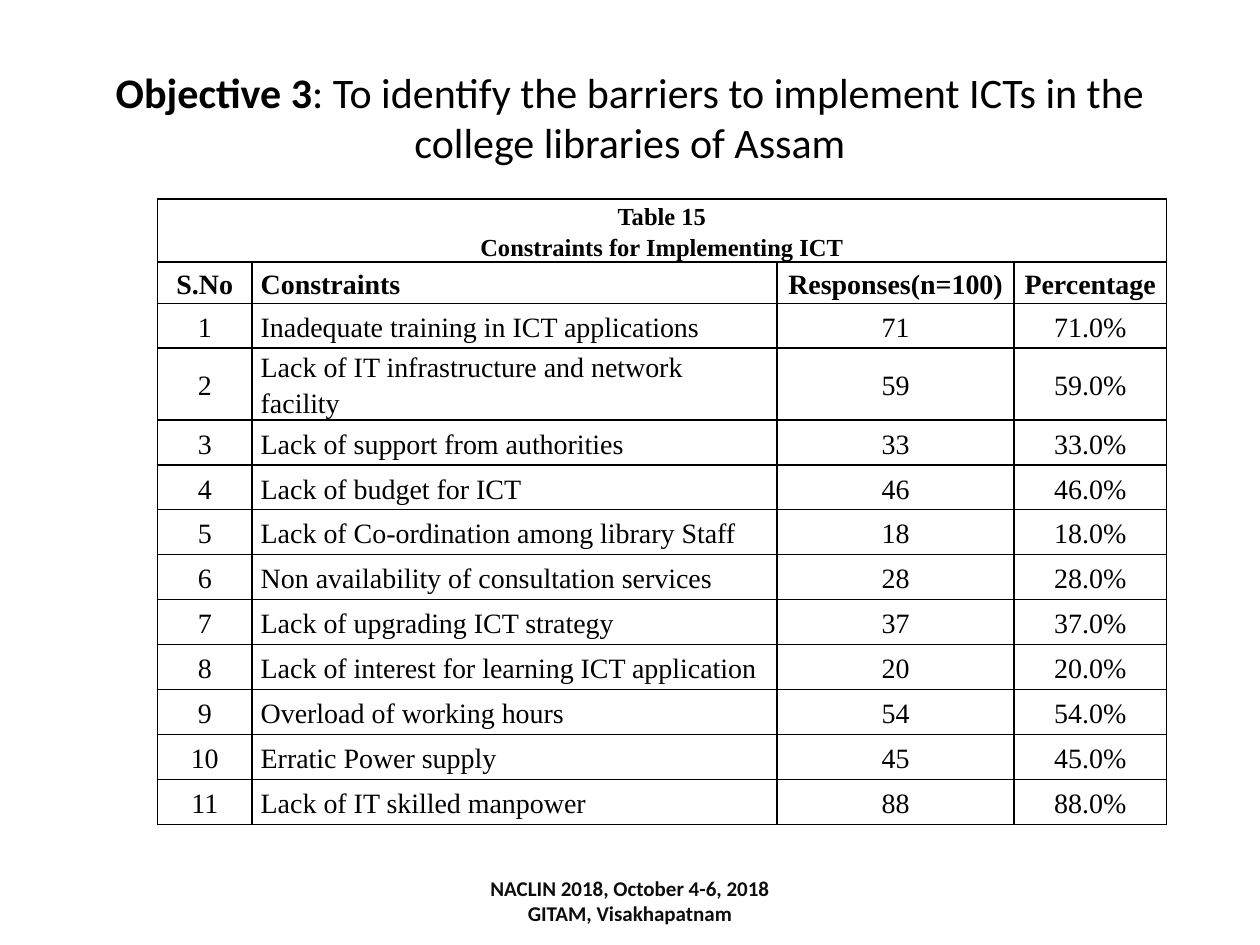
from dataclasses import dataclass

from lxml.etree import SubElement
from pptx import Presentation
from pptx.dml.color import RGBColor
from pptx.enum.text import MSO_ANCHOR, PP_ALIGN
from pptx.oxml.ns import qn
from pptx.util import Pt


@dataclass(frozen=True)
class Theme:
    ink: RGBColor = RGBColor(0, 0, 0)
    soft: RGBColor = RGBColor(0x0D, 0x0D, 0x0D)
    sans: str = "Calibri"
    serif: str = "Times New Roman"
    title: float = 24
    caption: float = 14
    body: float = 16
    foot: float = 12
    rule: float = 1
    inset: float = 5
    spacing: float = 1.15


@dataclass(frozen=True)
class Style:
    font: str
    size: float
    color: RGBColor
    bold: bool = False


@dataclass(frozen=True)
class Barrier:
    name: str
    count: int


LOOK = Theme()
PLAIN = Style(LOOK.serif, LOOK.body, LOOK.ink)
HEAD = Style(LOOK.serif, LOOK.body, LOOK.ink, True)
CAPTION = Style(LOOK.serif, LOOK.caption, LOOK.ink, True)
FOOT = Style(LOOK.sans, LOOK.foot, LOOK.soft, True)

WIDTHS = (54, 300, 135.5, 87)
CAPTION_H, HEAD_H, ROW_H = 36, 23.5, 25.7
HEADERS = ("S.No", "Constraints", "Responses(n=100)", "Percentage")
BARRIERS = (
    Barrier("Inadequate training in ICT applications", 71),
    Barrier("Lack of IT infrastructure and network facility", 59),
    Barrier("Lack of support from authorities", 33),
    Barrier("Lack of budget for ICT", 46),
    Barrier("Lack of Co-ordination among library Staff", 18),
    Barrier("Non availability of consultation services", 28),
    Barrier("Lack of upgrading ICT strategy", 37),
    Barrier("Lack of interest for learning ICT application", 20),
    Barrier("Overload of working hours", 54),
    Barrier("Erratic Power supply", 45),
    Barrier("Lack of IT skilled manpower", 88),
)


def add_run(para, text: str, style: Style) -> None:
    run = para.add_run()
    run.text = text
    font = run.font
    font.name, font.size, font.bold = style.font, Pt(style.size), style.bold
    font.color.rgb = style.color


def add_lines(frame, lines: tuple, style: Style, align=PP_ALIGN.CENTER,
              spacing: float = 1) -> None:
    for i, line in enumerate(lines):
        para = frame.add_paragraph() if i else frame.paragraphs[0]
        para.alignment, para.line_spacing = align, spacing
        add_run(para, line, style)


def place(shape, left: float, top: float, width: float, height: float) -> None:
    shape.left, shape.top = Pt(left), Pt(top)
    shape.width, shape.height = Pt(width), Pt(height)


def frame_cell(cell) -> None:
    """Rule all four sides, clear the fill and set the margins."""
    props = cell._tc.get_or_add_tcPr()
    for side in ("a:lnL", "a:lnR", "a:lnT", "a:lnB"):
        line = SubElement(props, qn(side), w=str(Pt(LOOK.rule)))
        fill = SubElement(line, qn("a:solidFill"))
        SubElement(fill, qn("a:srgbClr"), val=str(LOOK.ink))
    cell.fill.background()
    cell.margin_left = cell.margin_right = Pt(LOOK.inset)
    cell.margin_top = cell.margin_bottom = 0


def fill_row(table, row: int, texts: tuple, style: Style) -> None:
    for col, text in enumerate(texts):
        cell = table.cell(row, col)
        cell.vertical_anchor = MSO_ANCHOR.MIDDLE
        align = PP_ALIGN.LEFT if col == 1 else PP_ALIGN.CENTER
        add_lines(cell.text_frame, (text,), style, align, LOOK.spacing)


def add_title(slide) -> None:
    title = slide.shapes.title
    place(title, 36, 21.6, 648, 90)
    title.text_frame.vertical_anchor = MSO_ANCHOR.MIDDLE
    para = title.text_frame.paragraphs[0]
    para.alignment = PP_ALIGN.CENTER
    add_run(para, "Objective 3", Style(LOOK.sans, LOOK.title, LOOK.ink, True))
    add_run(para, ": To identify the barriers to implement ICTs in the "
            "college libraries of Assam", Style(LOOK.sans, LOOK.title, LOOK.ink))


def add_grid(slide) -> None:
    heights = (CAPTION_H, HEAD_H) + (ROW_H,) * len(BARRIERS)
    table = slide.shapes.add_table(
        len(heights), len(WIDTHS), Pt(90), Pt(113.8),
        Pt(sum(WIDTHS)), Pt(sum(heights))).table
    table.first_row = table.horz_banding = False
    for col, width in zip(table.columns, WIDTHS):
        col.width = Pt(width)
    for row, height in zip(table.rows, heights):
        row.height = Pt(height)
    for cell in table.iter_cells():
        frame_cell(cell)
    table.cell(0, 0).merge(table.cell(0, len(WIDTHS) - 1))
    add_lines(table.cell(0, 0).text_frame,
              ("Table 15", "Constraints for Implementing ICT"),
              CAPTION, spacing=LOOK.spacing)
    fill_row(table, 1, HEADERS, HEAD)
    for num, item in enumerate(BARRIERS, 1):
        texts = (str(num), item.name, str(item.count), f"{item.count:.1f}%")
        fill_row(table, num + 1, texts, PLAIN)


def add_foot(slide) -> None:
    box = slide.shapes.add_textbox(Pt(246), Pt(500.4), Pt(228), Pt(28.8))
    frame = box.text_frame
    frame.word_wrap = True
    frame.vertical_anchor = MSO_ANCHOR.MIDDLE
    add_lines(frame, ("NACLIN 2018, October 4-6, 2018",
                      "GITAM, Visakhapatnam"), FOOT)


def main() -> None:
    deck = Presentation()
    deck.slide_width, deck.slide_height = Pt(720), Pt(540)
    slide = deck.slides.add_slide(deck.slide_layouts[5])
    add_title(slide)
    add_grid(slide)
    add_foot(slide)
    deck.save("out.pptx")


if __name__ == "__main__":
    main()
